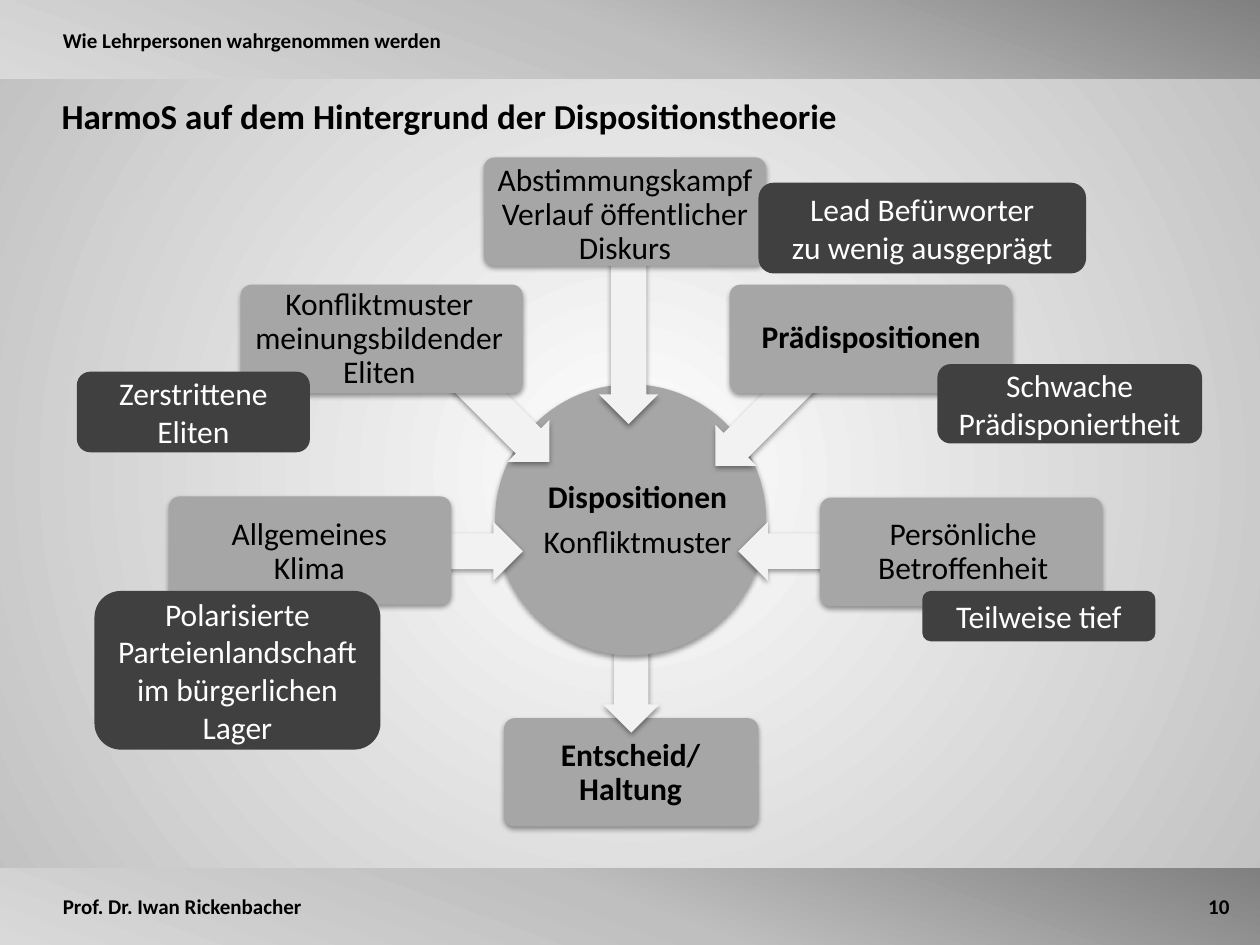
from typing import NamedTuple

from lxml.etree import SubElement
from pptx import Presentation
from pptx.dml.color import RGBColor
from pptx.enum.shapes import MSO_SHAPE
from pptx.enum.text import MSO_ANCHOR, PP_ALIGN
from pptx.oxml.ns import qn
from pptx.util import Emu, Pt

EMU_PER_PX = 9144  # 100 px to the inch
FONT = "Calibri"
BLACK = RGBColor(0x00, 0x00, 0x00)
WHITE = RGBColor(0xFF, 0xFF, 0xFF)
GREY = RGBColor(0xA6, 0xA6, 0xA6)
PALE = RGBColor(0xF2, 0xF2, 0xF2)
DARK = RGBColor(0x40, 0x40, 0x40)
BAND_STOPS = [(0, RGBColor(0x80, 0x80, 0x80)), (50, RGBColor(0xBF, 0xBF, 0xBF)),
              (100, RGBColor(0xD9, 0xD9, 0xD9))]
BACK_STOPS = [(0, WHITE), (100, RGBColor(0xBF, 0xBF, 0xBF))]


class Box(NamedTuple):
    x: int
    y: int
    w: int
    h: int


class Arrow(NamedTuple):
    box: Box
    rotation: int


class Node(NamedTuple):
    text: str
    box: Box
    text_box: Box
    arrow: Arrow
    bold: bool = False


class Callout(NamedTuple):
    text: str
    box: Box


DECISION = Node("Entscheid/\vHaltung", Box(400, 570, 202, 86), Box(402, 573, 197, 81),
                Arrow(Box(429, 487, 144, 45), 270), True)
FACTORS = [
    Node("Allgemeines\vKlima", Box(134, 394, 224, 86), Box(147, 398, 197, 81),
         Arrow(Box(266, 414, 149, 47), 180)),
    Node("Konfliktmuster meinungsbildender Eliten", Box(191, 226, 224, 86),
         Box(189, 229, 224, 81), Arrow(Box(308, 290, 150, 47), 225)),
    Node("Abstimmungskampf Verlauf öffentlicher Diskurs", Box(384, 125, 224, 86),
         Box(384, 130, 224, 81), Arrow(Box(427, 241, 144, 47), 270)),
    Node("Prädispositionen", Box(579, 226, 224, 86), Box(593, 228, 197, 81),
         Arrow(Box(546, 294, 149, 46), 315), True),
    Node("Persönliche\vBetroffenheit", Box(651, 395, 224, 86), Box(666, 398, 197, 81),
         Arrow(Box(586, 414, 149, 47), 0)),
]
CALLOUTS = [
    Callout("Schwache\vPrädisponiertheit", Box(744, 289, 210, 63)),
    Callout("Lead Befürworter\vzu wenig ausgeprägt", Box(602, 145, 260, 72)),
    Callout("Teilweise tief", Box(732, 469, 185, 40)),
    Callout("Polarisierte Parteienlandschaft im bürgerlichen Lager", Box(75, 469, 227, 126)),
    Callout("Zerstrittene Eliten", Box(61, 295, 185, 64)),
]


def emu(box: Box) -> list[Emu]:
    return [Emu(v * EMU_PER_PX) for v in box]


def write(tf, text: str, *, size: int = 18, bold: bool = False, color: RGBColor = BLACK,
          align=PP_ALIGN.LEFT, line_spacing: float = 1.0, after: float = 0) -> None:
    """Add one paragraph; a vertical tab in the text is a line break."""
    p = tf.add_paragraph() if tf.text else tf.paragraphs[0]
    p.alignment, p.line_spacing, p.space_after = align, line_spacing, Pt(after)
    for i, line in enumerate(text.split("\v")):
        if i:
            p.add_line_break()
        r = p.add_run()
        r.text = line
        r.font.name, r.font.size, r.font.bold = FONT, Pt(size), bold
        r.font.color.rgb = color


def add_frame(s, box: Box, anchor=MSO_ANCHOR.MIDDLE, inset: int | None = None):
    tf = s.shapes.add_textbox(*emu(box)).text_frame
    tf.word_wrap, tf.vertical_anchor = True, anchor
    if inset is not None:
        tf.margin_left = tf.margin_right = Emu(inset * EMU_PER_PX)
        tf.margin_top = tf.margin_bottom = Emu(inset * EMU_PER_PX)
    return tf


def add_shape(s, kind, box: Box, color: RGBColor, shadow: bool = False):
    sp = s.shapes.add_shape(kind, *emu(box))
    sp.fill.solid()
    sp.fill.fore_color.rgb = color
    sp.line.fill.background()
    sp.shadow.inherit = False
    if shadow:
        effects = sp.element.spPr.find(qn("a:effectLst"))
        outer = SubElement(effects, qn("a:outerShdw"), blurRad="39370", dist="20320",
                           dir="5400000", rotWithShape="0")
        clr = SubElement(outer, qn("a:srgbClr"), val=str(BLACK))
        SubElement(clr, qn("a:alpha"), val="38000")
    return sp


def set_gradient(props, stops, angle: int | None = None) -> None:
    """Turn the solid fill in props into a linear, or without an angle a circular, gradient."""
    fill = props.find(qn("a:solidFill"))
    grad = fill.makeelement(qn("a:gradFill"), {"rotWithShape": "1"})
    gs_list = SubElement(grad, qn("a:gsLst"))
    for pos, color in stops:
        gs = SubElement(gs_list, qn("a:gs"), pos=str(pos * 1000))
        SubElement(gs, qn("a:srgbClr"), val=str(color))
    if angle is None:
        circle = SubElement(grad, qn("a:path"), path="circle")
        SubElement(circle, qn("a:fillToRect"), dict.fromkeys("ltrb", "50000"))
    else:
        SubElement(grad, qn("a:lin"), ang=str(angle * 60000), scaled="0")
    props.replace(fill, grad)


def write_label(tf, text: str, bold: bool = False) -> None:
    write(tf, text, bold=bold, align=PP_ALIGN.CENTER, line_spacing=0.9, after=6.3)


def draw_arrow(s, arrow: Arrow) -> None:
    sp = add_shape(s, MSO_SHAPE.LEFT_ARROW, arrow.box, PALE, shadow=True)
    sp.adjustments[0], sp.adjustments[1] = 0.6, 0.5
    sp.rotation = arrow.rotation


def draw_node(s, node: Node) -> None:
    sp = add_shape(s, MSO_SHAPE.ROUNDED_RECTANGLE, node.box, GREY, shadow=True)
    sp.adjustments[0] = 0.1
    write_label(add_frame(s, node.text_box, inset=3), node.text, node.bold)


def draw_callout(s, callout: Callout) -> None:
    tf = add_shape(s, MSO_SHAPE.ROUNDED_RECTANGLE, callout.box, DARK).text_frame
    tf.word_wrap, tf.vertical_anchor = True, MSO_ANCHOR.MIDDLE
    write(tf, callout.text, color=WHITE, align=PP_ALIGN.CENTER)


def main() -> None:
    prs = Presentation()
    prs.slide_width, prs.slide_height = Emu(1000 * EMU_PER_PX), Emu(750 * EMU_PER_PX)
    s = prs.slides.add_slide(prs.slide_layouts[6])

    # Background and bands
    s.background.fill.solid()
    s.background.fill.fore_color.rgb = WHITE
    set_gradient(s.element.find(".//" + qn("p:bgPr")), BACK_STOPS)
    for y in (0, 689):
        band = add_shape(s, MSO_SHAPE.RECTANGLE, Box(-1, y, 1002, 62), GREY)
        set_gradient(band.element.spPr, BAND_STOPS, 110)

    # Header, footer, page number and heading
    for text, box in (("Prof. Dr. Iwan Rickenbacher", Box(40, 695, 850, 48)),
                      ("Wie Lehrpersonen wahrgenommen werden", Box(40, 8, 850, 48)),
                      ("10", Box(949, 695, 51, 48))):
        write(add_frame(s, box), text, size=12, bold=True)
    write(add_frame(s, Box(39, 70, 781, 44), MSO_ANCHOR.TOP),
          "HarmoS auf dem Hintergrund der Dispositionstheorie", size=20, bold=True)

    # Decision below the central circle
    draw_node(s, DECISION)
    draw_arrow(s, DECISION.arrow)
    add_shape(s, MSO_SHAPE.OVAL, Box(393, 305, 215, 215), GREY, shadow=True)
    tf = add_frame(s, Box(414, 335, 184, 157), inset=1)
    write_label(tf, "Dispositionen", bold=True)
    write_label(tf, "Konfliktmuster")

    # Factors pointing to the circle, then the remarks on them
    for node in FACTORS:
        draw_arrow(s, node.arrow)
        draw_node(s, node)
    for callout in CALLOUTS:
        draw_callout(s, callout)

    prs.save("out.pptx")


if __name__ == "__main__":
    main()
